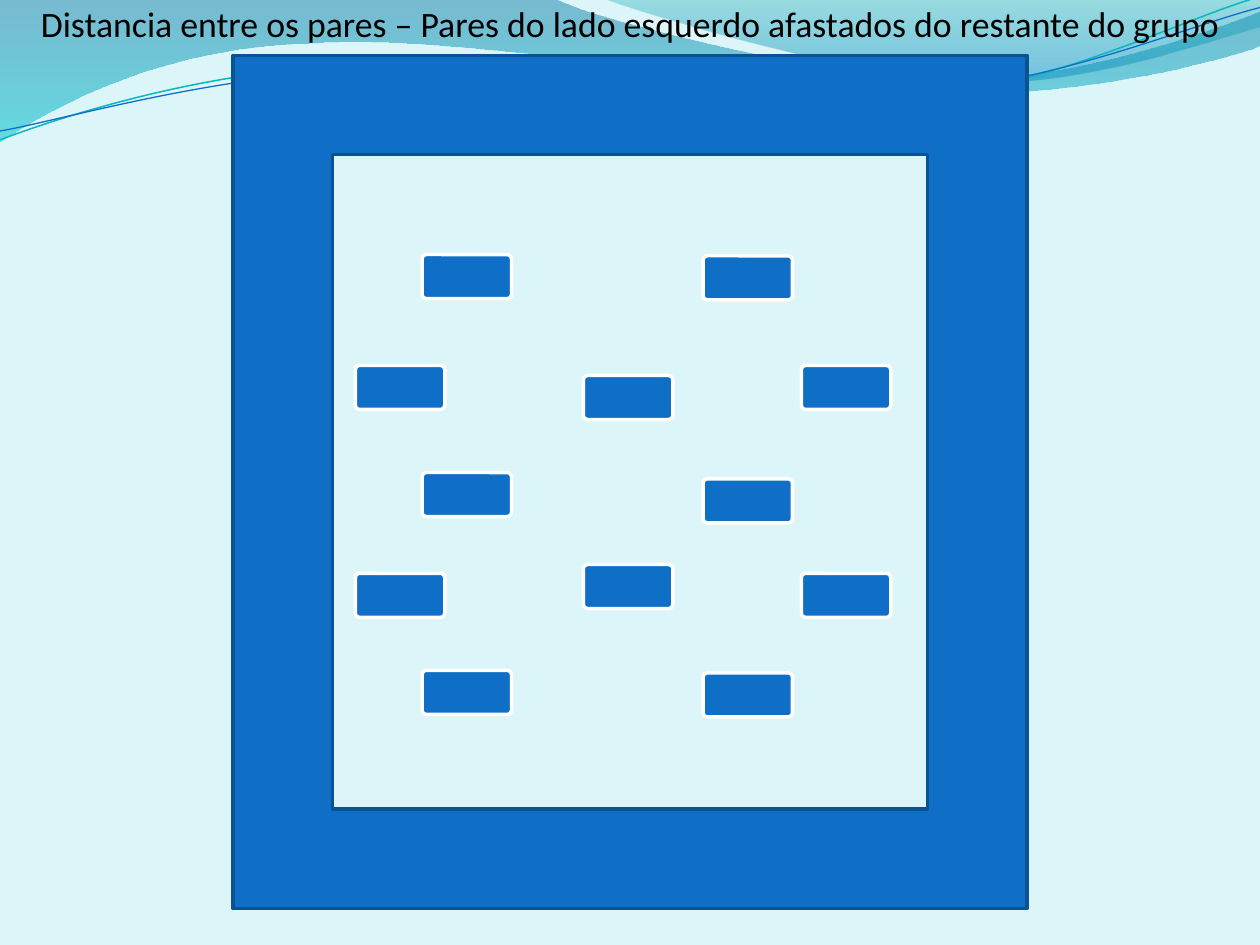
from pptx import Presentation
from pptx.dml.color import RGBColor
from pptx.enum.shapes import MSO_SHAPE
from pptx.enum.text import MSO_ANCHOR, MSO_AUTO_SIZE, PP_ALIGN
from pptx.oxml.ns import qn
from pptx.util import Inches, Pt
from lxml.etree import SubElement

PALE = RGBColor(0xDB, 0xF5, 0xF9)
BLUE = RGBColor(0x0F, 0x6F, 0xC6)
NAVY = RGBColor(0x0B, 0x52, 0x92)
TEAL = RGBColor(0x0A, 0xB8, 0xBF)
DEEP = RGBColor(0x00, 0x74, 0xA1)
CYAN = RGBColor(0x00, 0xC6, 0xCF)
SEA = RGBColor(0x00, 0xA1, 0xA9)
SKY = RGBColor(0x00, 0x8B, 0xBF)
WHITE = RGBColor(0xFF, 0xFF, 0xFF)
BLACK = RGBColor(0x00, 0x00, 0x00)

LARGE_WAVE = [
    (0, 0), (4.4, -0.01),
    (4.76, 0.17, 6.64, 0.63, 7.58, 0.63), (8.53, 0.63, 9.58, 0.26, 10, 0.09),
    (10.01, 0.36),
    (9.83, 0.44, 8.7, 0.76, 7.46, 0.75), (6.22, 0.75, 3.82, 0.28, 2.57, 0.34),
    (1.29, 0.36, 0.46, 0.83, -0.01, 1.13),
]
SMALL_WAVE = [
    (4.79, -0.01),
    (5.09, 0.11, 6.82, 0.62, 7.69, 0.65), (8.56, 0.69, 9.61, 0.32, 10, 0.21),
    (10, 0),
]
TEAL_LINE = [
    (0, 1.11),
    (0.48, 0.93, 1.58, 0.57, 2.77, 0.52), (3.95, 0.47, 5.93, 0.89, 7.13, 0.8),
    (8.33, 0.71, 9.38, 0.15, 9.98, -0.02),
]
BLUE_LINE = [
    (0, 1.04),
    (0.47, 0.96, 1.64, 0.61, 2.83, 0.56), (4.03, 0.51, 5.97, 0.84, 7.17, 0.75),
    (8.36, 0.67, 9.41, 0.21, 10, 0.06),
]
PAIR_ROWS_BY_COLUMN = {
    0.97: (2.46, 4.11),
    1.5: (1.58, 3.31, 4.88),
    2.78: (2.54, 4.04),
    3.73: (1.59, 3.36, 4.9),
    4.51: (2.46, 4.11),
}
PAIR_WIDTH, PAIR_HEIGHT = 0.71, 0.35


def bend_curves(sp, segments):
    lines = iter(list(sp._element.iter(qn("a:lnTo"))))
    for segment in segments[1:]:
        curve = next(lines)
        if len(segment) == 6:
            curve.tag = qn("a:cubicBezTo")
            for line in (next(lines), next(lines)):
                curve.append(line[0])
                line.getparent().remove(line)


def add_outline(slide, left, top, segments, close):
    points = [(Inches(left + x), Inches(top + y))
              for segment in segments
              for x, y in zip(segment[::2], segment[1::2])]
    builder = slide.shapes.build_freeform(*points[0])
    builder.add_line_segments(points[1:], close=close)
    sp = builder.convert_to_shape()
    bend_curves(sp, segments)
    sp.shadow.inherit = False
    return sp


def add_wave(slide, left, top, segments, stops):
    sp = add_outline(slide, left, top, segments, True)
    sp.line.fill.background()
    sp.fill.gradient()
    sp.fill.gradient_angle = 270
    for stop, (position, color, _) in zip(sp.fill.gradient_stops, stops):
        stop.position = position
        stop.color.rgb = color
    colors = sp._element.iter(qn("a:srgbClr"))
    for color, (_, _, opacity) in zip(colors, stops):
        SubElement(color, qn("a:alpha")).set("val", str(opacity * 1000))


def add_wave_line(slide, left, top, segments, color, width):
    sp = add_outline(slide, left, top, segments, False)
    sp.fill.background()
    sp.line.color.rgb = color
    sp.line.width = Pt(width)


def add_header_waves(slide, left, top):
    add_wave(slide, left, top, LARGE_WAVE, [(0, DEEP, 45), (1, CYAN, 55)])
    add_wave(slide, left, top, SMALL_WAVE, [(0, SEA, 30), (0.8, SKY, 45)])
    add_wave_line(slide, left, top, TEAL_LINE, TEAL, 0.85)
    add_wave_line(slide, left, top, BLUE_LINE, BLUE, 0.75)


def add_block(slide, kind, left, top, width, height, line_color):
    sp = slide.shapes.add_shape(
        kind, Inches(left), Inches(top), Inches(width), Inches(height))
    sp.shadow.inherit = False
    sp.fill.solid()
    sp.fill.fore_color.rgb = BLUE
    sp.line.color.rgb = line_color
    sp.line.width = Pt(2)
    return sp


def add_room(slide, left, top, width, height):
    add_block(slide, MSO_SHAPE.FRAME, left, top, width, height, NAVY)
    for x, rows in PAIR_ROWS_BY_COLUMN.items():
        for y in rows:
            pair = add_block(slide, MSO_SHAPE.ROUNDED_RECTANGLE, left + x, top + y,
                             PAIR_WIDTH, PAIR_HEIGHT, WHITE)
            pair.adjustments[0] = 0.1


def place_title(slide, left, top, width, height):
    title = slide.shapes.title
    title.left, title.top = Inches(left), Inches(top)
    title.width, title.height = Inches(width), Inches(height)
    slide.shapes._spTree.append(title._element)
    tf = title.text_frame
    tf.word_wrap = True
    tf.auto_size = MSO_AUTO_SIZE.NONE
    tf.vertical_anchor = MSO_ANCHOR.TOP
    p = tf.paragraphs[0]
    p.alignment = PP_ALIGN.CENTER
    p.line_spacing = 0.9
    r = p.add_run()
    r.text = ("Distancia entre os pares – Pares do lado esquerdo "
              "afastados do restante do grupo")
    r.font.name = "Calibri"
    r.font.size = Pt(20.4)
    r.font.color.rgb = BLACK


def main():
    prs = Presentation()
    prs.slide_width, prs.slide_height = Inches(10), Inches(7.5)
    slide = prs.slides.add_slide(prs.slide_layouts[5])
    slide.background.fill.solid()
    slide.background.fill.fore_color.rgb = PALE
    add_header_waves(slide, 0, 0)
    add_room(slide, 1.85, 0.44, 6.3, 6.77)
    place_title(slide, 0, 0, 10, 0.52)
    prs.save("out.pptx")


if __name__ == "__main__":
    main()
